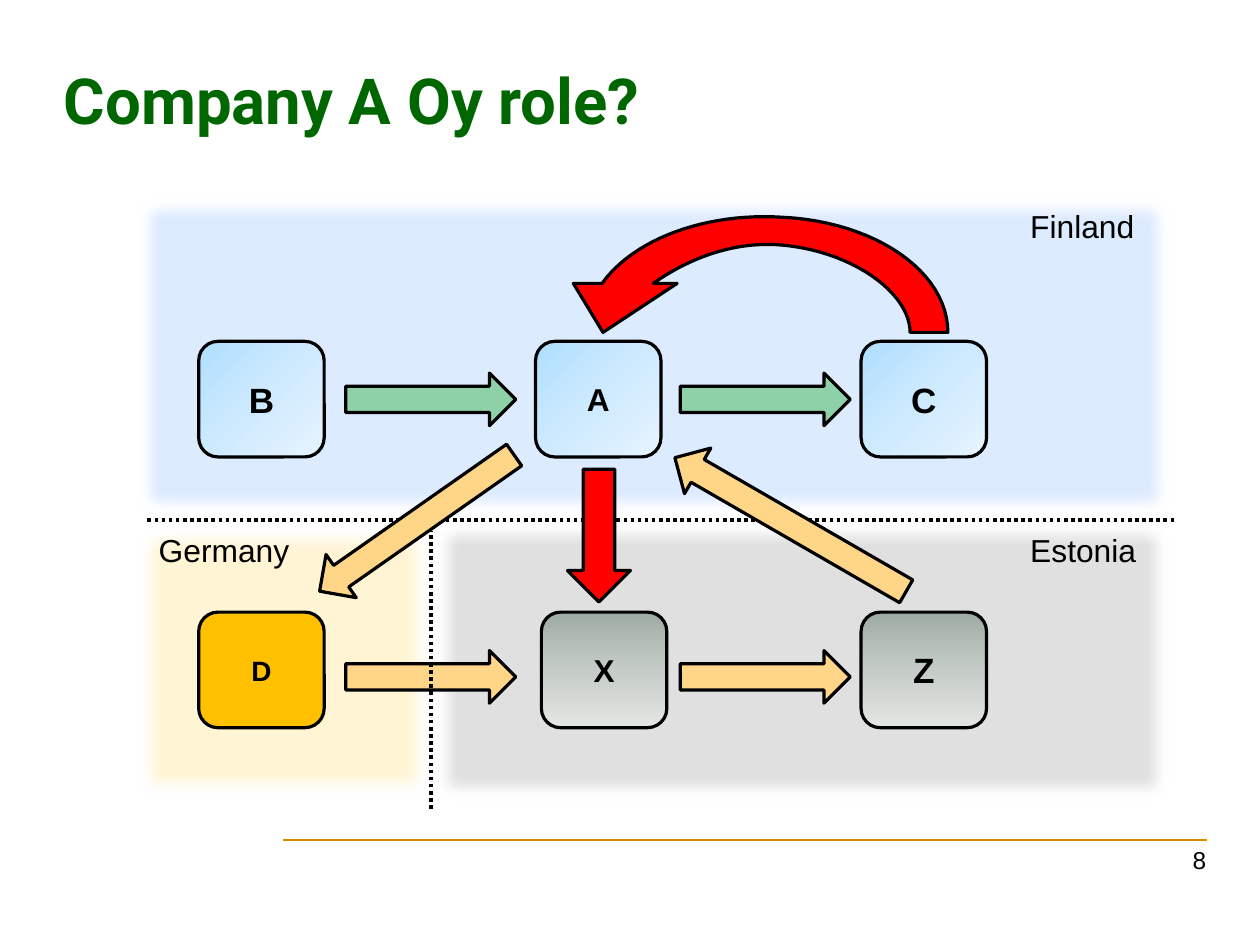
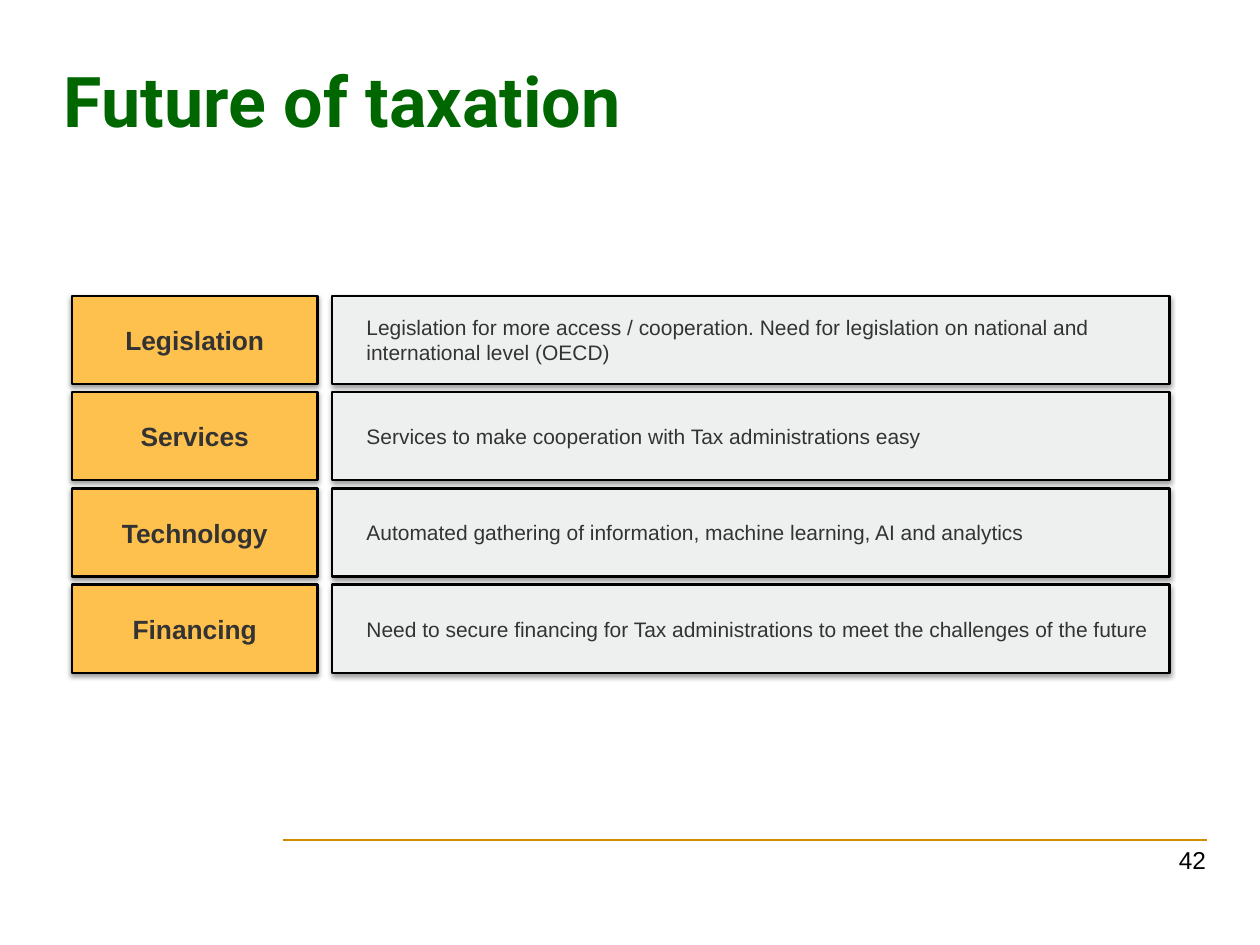
import copy
import pptx
import pptx.dml.color
import pptx.enum.dml
import pptx.enum.shapes
import pptx.enum.text
import pptx.oxml
import pptx.oxml.ns
import pptx.util
from dataclasses import dataclass

Cm = pptx.util.Cm
Pt = pptx.util.Pt
SHAPE = pptx.enum.shapes.MSO_SHAPE
ALIGN = pptx.enum.text.PP_ALIGN
ANCHOR = pptx.enum.text.MSO_ANCHOR


@dataclass(frozen=True)
class Theme:
    title_font: str = "Roboto"
    body_font: str = "Arial"
    title: str = "006600"
    rule: str = "D58B00"
    ink: str = "000000"
    soft_ink: str = "333333"
    green: str = "8ED1A9"
    sand: str = "FFD688"
    red: str = "FF0000"
    gold: str = "FFC000"
    topic: str = "FFC14D"
    detail: str = "EEF0EF"
    finland: str = "DDEBFF"
    germany: str = "FFF5D5"
    estonia: str = "E0E0E0"
    sky: tuple = (45, "AFDFFF", "CEEAFF", "E7F4FF")
    stone: tuple = (90, "9EABA2", "C5CCC7", "E3E6E3")
    number_size: float = 15.4
    country_size: float = 20
    topic_size: float = 16.6
    detail_size: float = 13.2
    outline: float = 2
    thin: float = 1.5
    dotted: float = 2.25


THEME = Theme()

ROLE = {"title": "Company A Oy role?", "size": 40, "number": "8"}
REGIONS = [
    (THEME.estonia, (9.53, 11.46, 16.61, 6.48)),
    (THEME.germany, (2.92, 11.58, 6.78, 6.27)),
    (THEME.finland, (2.92, 4.27, 23.24, 7.32)),
]
COUNTRIES = [
    ("Germany", 3.28, 11.68, 3.51),
    ("Estonia", 22.66, 11.68, 3),
    ("Finland", 22.66, 4.47, 3),
]
NODE_WIDTH, NODE_HEIGHT = 2.79, 2.57
UPPER, LOWER = 7.59, 13.61
COMPANIES = [
    ("B", 4.42, UPPER, THEME.sky, 22.1),
    ("A", 11.91, UPPER, THEME.sky, 19.9),
    ("C", 19.15, UPPER, THEME.sky, 22.1),
    ("D", 4.42, LOWER, THEME.gold, 17.6),
    ("X", 12.04, LOWER, THEME.stone, 19.9),
    ("Z", 19.15, LOWER, THEME.stone, 22.1),
]
ARROWS = [
    (THEME.green, 9.58, 8.88, 3.78, 1.17, 0),
    (THEME.green, 17.02, 8.88, 3.78, 1.17, 0),
    (THEME.sand, 9.58, 15.05, 3.78, 1.17, 0),
    (THEME.sand, 17.02, 15.05, 3.78, 1.17, 0),
    (THEME.sand, 9.27, 11.63, 5.28, 1.17, 145),
    (THEME.sand, 17.58, 11.66, 5.94, 1.17, 210),
    (THEME.red, 13.32, 11.91, 2.95, 1.4, 90),
]
BORDERS = [((3.28, 11.56), (26.14, 11.56)), ((9.58, 17.98), (9.58, 11.81))]
RETURN_START = (21.08, 7.39)
RETURN_STEPS = [
    [(21.08, 6.05), (19.48, 4.93), (17.4, 4.83)],
    [(15.7, 4.72), (14.1, 5.31), (13.39, 6.3)],
    [(12.75, 6.3)],
    [(13.41, 7.39)],
    [(15.06, 6.3)],
    [(14.53, 6.3)],
    [(15.21, 5.82), (16.18, 5.38), (17.27, 5.44)],
    [(18.9, 5.54), (20.24, 6.5), (20.24, 7.39)],
]

FUTURE = {"title": "Future of taxation", "size": 44.1, "number": "42"}
TOPICS = [
    ("Legislation", "Legislation for more access / cooperation. Need for "
     "legislation on national and international level (OECD)"),
    ("Services", "Services to make cooperation with Tax administrations easy"),
    ("Technology", "Automated gathering of information, machine learning, AI and analytics"),
    ("Financing", "Need to secure financing for Tax administrations to meet "
     "the challenges of the future"),
]
TOPIC_TOP, TOPIC_PITCH, TOPIC_HEIGHT = 6.58, 2.14, 1.96


def rgb(value):
    return pptx.dml.color.RGBColor.from_string(value)


def drawing_element(markup):
    namespace = pptx.oxml.ns.nsdecls("a")
    return pptx.oxml.parse_xml(markup.replace(" ", f" {namespace} ", 1))


def add_effect(shape, markup):
    effects = shape._element.spPr.find(pptx.oxml.ns.qn("a:effectLst"))
    effects.append(drawing_element(markup))


def paint(shape, fill, line=THEME.ink, width=THEME.outline):
    shape.shadow.inherit = False
    if isinstance(fill, tuple):
        angle, *colours = fill
        shape.fill.gradient()
        shape.fill.gradient_angle = 360 - angle
        stops = shape._element.spPr.find(".//" + pptx.oxml.ns.qn("a:gsLst"))
        stops.insert(1, copy.deepcopy(stops[0]))
        for index, stop in enumerate(shape.fill.gradient_stops):
            stop.position = index / 2
            stop.color.rgb = rgb(colours[index])
    else:
        shape.fill.solid()
        shape.fill.fore_color.rgb = rgb(fill)
    if line:
        shape.line.color.rgb = rgb(line)
        shape.line.width = Pt(width)
    else:
        shape.line.fill.background()


def add_panel(page, kind, place, fill, **outline):
    panel = page.shapes.add_shape(kind, *map(Cm, place))
    paint(panel, fill, **outline)
    return panel


def write(box, text, size, colour=THEME.ink, font=THEME.body_font, bold=False,
          align=ALIGN.LEFT, anchor=ANCHOR.MIDDLE, wrap=True):
    frame = box.text_frame
    frame.text = text
    frame.word_wrap = wrap
    frame.vertical_anchor = anchor
    para = frame.paragraphs[0]
    para.alignment = align
    for span in para.runs:
        span.font.name = font
        span.font.size = Pt(size)
        span.font.bold = bold
        span.font.color.rgb = rgb(colour)


def add_text(page, place, text, size, **style):
    write(page.shapes.add_textbox(*map(Cm, place)), text, size, **style)


def add_line(page, start, end, colour, width):
    line = page.shapes.add_connector(
        pptx.enum.shapes.MSO_CONNECTOR.STRAIGHT, *map(Cm, start + end))
    line.line.color.rgb = rgb(colour)
    line.line.width = Pt(width)
    line._element.spPr.append(drawing_element("<a:effectLst />"))
    return line


def add_page(deck, content):
    page = deck.slides.add_slide(deck.slide_layouts[6])
    add_line(page, (6.3, 18.67), (26.85, 18.67), THEME.rule, THEME.thin)
    add_text(page, (1.17, 0.46, 23.83, 3.51), content["title"], content["size"],
             colour=THEME.title, font=THEME.title_font, bold=True)
    add_text(page, (21.23, 18.67, 5.84, 1.4), content["number"], THEME.number_size,
             align=ALIGN.RIGHT, anchor=ANCHOR.TOP)
    return page


def curve_points(start, step, count=24):
    if len(step) == 1:
        return step
    corners = [start, *step]
    points = []
    for index in range(1, count + 1):
        t = index / count
        weights = ((1 - t) ** 3, 3 * t * (1 - t) ** 2, 3 * t * t * (1 - t), t ** 3)
        points.append(tuple(sum(weight * corner[axis] for weight, corner in zip(weights, corners))
                            for axis in (0, 1)))
    return points


def add_return_arrow(page):
    points = [RETURN_START]
    for step in RETURN_STEPS:
        points.extend(curve_points(points[-1], step))
    outline = [(Cm(x), Cm(y)) for x, y in points]
    builder = page.shapes.build_freeform(*outline[0], scale=1.0)
    builder.add_line_segments(outline[1:], close=True)
    paint(builder.convert_to_shape(), THEME.red)


def build_role(deck):
    page = add_page(deck, ROLE)
    for fill, place in REGIONS:
        region = add_panel(page, SHAPE.RECTANGLE, place, fill, line=None)
        add_effect(region, '<a:softEdge rad="127000"/>')
    across, down = BORDERS
    dash = pptx.enum.dml.MSO_LINE.ROUND_DOT
    add_line(page, *across, THEME.ink, THEME.dotted).line.dash_style = dash
    for name, left, top, fill, size in COMPANIES:
        node = add_panel(page, SHAPE.ROUNDED_RECTANGLE,
                         (left, top, NODE_WIDTH, NODE_HEIGHT), fill)
        write(node, name, size, bold=True, align=ALIGN.CENTER, wrap=False)
    for fill, x, y, length, thickness, angle in ARROWS:
        place = (x - length / 2, y - thickness / 2, length, thickness)
        add_panel(page, SHAPE.RIGHT_ARROW, place, fill).rotation = angle
    add_return_arrow(page)
    for name, left, top, width in COUNTRIES:
        add_text(page, (left, top, width, 1.12), name, THEME.country_size, anchor=ANCHOR.TOP)
    add_line(page, *down, THEME.ink, THEME.dotted).line.dash_style = dash


def build_future(deck):
    page = add_page(deck, FUTURE)
    for index, (topic, detail) in enumerate(TOPICS):
        top = TOPIC_TOP + index * TOPIC_PITCH
        cells = [
            (1.6, 5.46, THEME.topic, topic, THEME.topic_size, True, ALIGN.CENTER, 0.25),
            (7.39, 18.62, THEME.detail, detail, THEME.detail_size, False, ALIGN.LEFT, 0.76),
        ]
        for left, width, fill, text, size, bold, align, inset in cells:
            cell = add_panel(page, SHAPE.RECTANGLE, (left, top, width, TOPIC_HEIGHT),
                             fill, width=THEME.thin)
            add_effect(cell, '<a:outerShdw blurRad="39370" dist="20320" dir="5400000" '
                       'rotWithShape="0"><a:srgbClr val="000000"><a:alpha val="38000"/>'
                       '</a:srgbClr></a:outerShdw>')
            write(cell, text, size, colour=THEME.soft_ink, bold=bold, align=align)
            cell.text_frame.margin_left = Cm(inset)


def main():
    deck = pptx.Presentation()
    deck.slide_width, deck.slide_height = Cm(28.02), Cm(21.01)
    build_role(deck)
    build_future(deck)
    deck.save("out.pptx")


if __name__ == "__main__":
    main()
